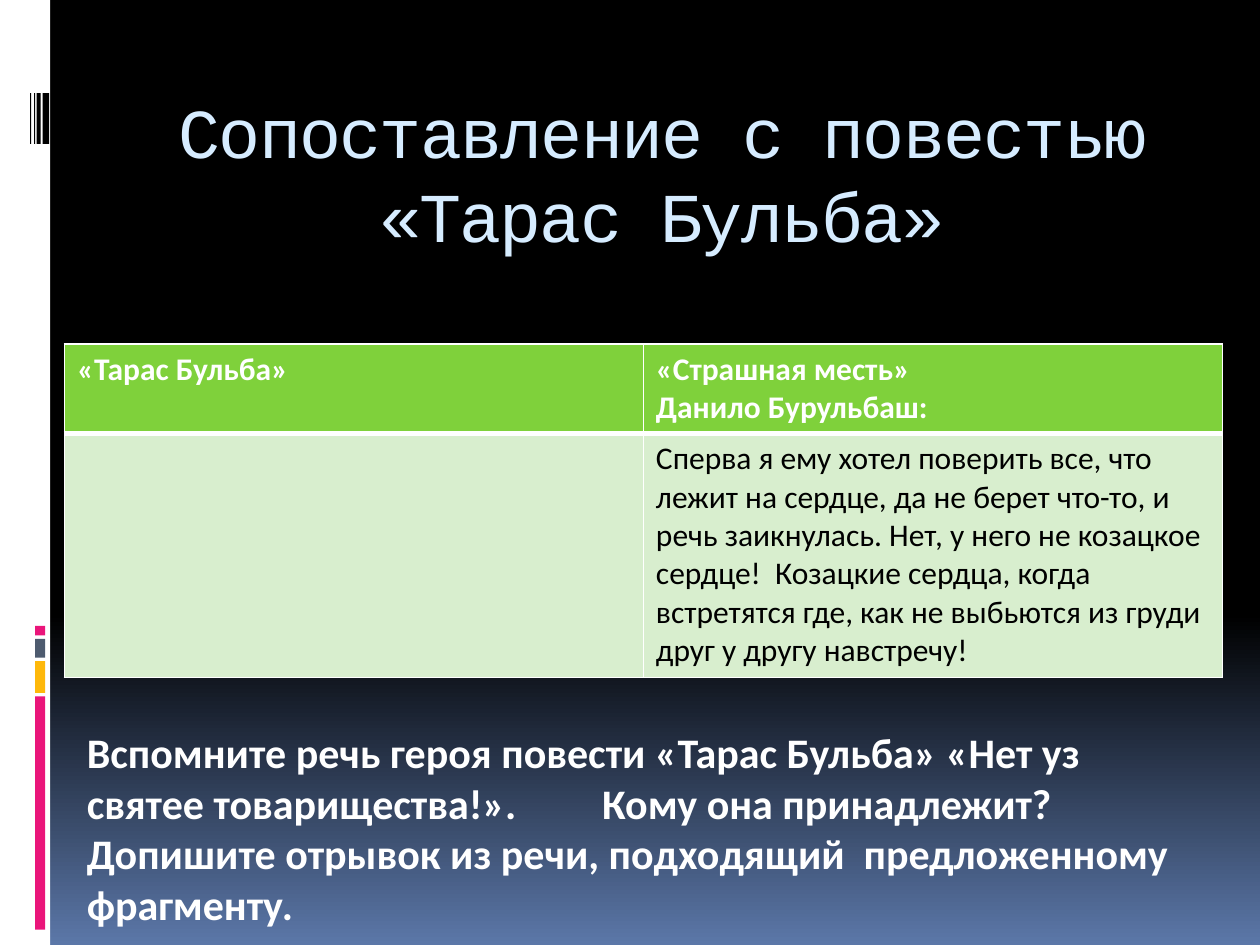
import pptx
import pptx.dml.color
import pptx.enum.shapes
import pptx.enum.text
import pptx.oxml
import pptx.oxml.ns
import pptx.util
from pptx.util import Cm

RGB = pptx.dml.color.RGBColor
WHITE = RGB(0xFF, 0xFF, 0xFF)
BLACK = RGB(0, 0, 0)
BLUE = RGB(0x5B, 0x77, 0xA8)
SKY = RGB(0xD6, 0xEC, 0xFF)
PINK = RGB(0xEA, 0x15, 0x7A)
GOLD = RGB(0xFE, 0xB8, 0x0A)
SLATE = RGB(0x4E, 0x5B, 0x6F)
GREEN = RGB(0x7F, 0xD1, 0x3B)
PALE = RGB(0xD8, 0xEE, 0xCE)

TITLE = {"name": "Courier New", "size": pptx.util.Pt(40), "bold": False, "color": SKY}
HEAD = {"name": "Calibri", "size": pptx.util.Pt(18), "bold": True, "color": WHITE}
BODY = {**HEAD, "bold": False, "color": BLACK}
TASK = {**HEAD, "size": pptx.util.Pt(24)}

ROWS = [
    (["«Тарас Бульба»", "«Страшная месть»\nДанило Бурульбаш:"], HEAD, GREEN, 3),
    (["", "Сперва я ему хотел поверить все, что лежит на сердце, да не берет "
      "что-то, и речь заикнулась. Нет, у него не козацкое сердце!  Козацкие "
      "сердца, когда встретятся где, как не выбьются из груди друг у другу "
      "навстречу!"], BODY, PALE, 1),
]


class Deck:
    def __init__(self, show):
        self.slide = show.slides.add_slide(show.slide_layouts[5])
        self.shapes = self.slide.shapes
        self.names = pptx.oxml.ns.nsdecls("a")

    def style(self, para, look):
        for key, value in look.items():
            if key == "color":
                para.font.color.rgb = value
            else:
                setattr(para.font, key, value)

    def label(self, frame, text, look):
        frame.text = text
        for para in frame.paragraphs:
            self.style(para, look)

    def ground(self, stops):
        fill = self.slide.background.fill
        fill.gradient()
        fill.gradient_angle = 270
        for stop, (place, color) in zip(fill.gradient_stops, stops):
            stop.position = place
            stop.color.rgb = color

    def bar(self, left, top, width, height, color):
        kind = pptx.enum.shapes.MSO_SHAPE.RECTANGLE
        bar = self.shapes.add_shape(kind, Cm(left), Cm(top), Cm(width), Cm(height))
        bar.shadow.inherit = False
        bar.fill.solid()
        bar.fill.fore_color.rgb = color
        bar.line.fill.background()

    def title(self, text, area, look):
        head = self.shapes.title
        head.left, head.top, head.width, head.height = map(Cm, area)
        frame = head.text_frame
        frame.word_wrap = True
        frame.auto_size = pptx.enum.text.MSO_AUTO_SIZE.NONE
        frame.vertical_anchor = pptx.enum.text.MSO_ANCHOR.TOP
        self.label(frame, text, look)
        para = frame.paragraphs[0]
        para.alignment = pptx.enum.text.PP_ALIGN.CENTER
        para.runs[0]._r.get_or_add_rPr().set("spc", "-100")

    def text(self, text, area, look, stop):
        box = self.shapes.add_textbox(*map(Cm, area))
        frame = box.text_frame
        frame.word_wrap = True
        frame.text = text
        para = frame.paragraphs[0]
        para._p.get_or_add_pPr().append(pptx.oxml.parse_xml(
            f'<a:tabLst {self.names}><a:tab pos="{int(Cm(stop))}" algn="l"/></a:tabLst>'))
        self.style(para, look)

    def edge(self, side, width):
        return pptx.oxml.parse_xml(
            f'<a:{side} {self.names} w="{int(pptx.util.Pt(width))}"><a:solidFill>'
            f'<a:srgbClr val="{WHITE}"/></a:solidFill></a:{side}>')

    def table(self, rows, area, highs):
        grid = self.shapes.add_table(len(rows), 2, *map(Cm, area)).table
        upper = 1
        for r, (texts, look, color, lower) in enumerate(rows):
            grid.rows[r].height = Cm(highs[r])
            for c, text in enumerate(texts):
                cell = grid.cell(r, c)
                self.label(cell.text_frame, text, look)
                cell.fill.solid()
                cell.fill.fore_color.rgb = color
                sides = {"lnL": 1, "lnR": 1, "lnT": upper, "lnB": lower}
                for spot, (side, width) in enumerate(sides.items()):
                    cell._tc.get_or_add_tcPr().insert(spot, self.edge(side, width))
            upper = lower


def main():
    show = pptx.Presentation()
    show.slide_width, show.slide_height = Cm(25.4), Cm(19.05)
    deck = Deck(show)
    deck.ground([(0.65, BLACK), (1, BLUE)])
    deck.bar(0, 0, 1.01, 19.05, WHITE)
    top = 12.62
    for height, color in [(0.19, PINK), (0.38, SLATE), (0.64, GOLD), (4.7, PINK)]:
        deck.bar(0.71, top, 0.2, height, color)
        top += height + 0.07
    for left, width in [(0.61, 0.02), (0.69, 0.02), (0.74, 0.08), (0.86, 0.13)]:
        deck.bar(left, 1.88, width, 1.02, BLACK)
    deck.title("Сопоставление с повестью «Тарас Бульба»", (2.54, 1.65, 21.59, 2.54), TITLE)
    deck.table(ROWS, (1.3, 6.93, 23.34, 6.7), (1.78, 4.92))
    deck.text("Вспомните речь героя повести «Тарас Бульба» «Нет уз святее "
              "товарищества!».\tКому она принадлежит?  Допишите отрывок из речи, "
              "подходящий  предложенному фрагменту.",
              (1.5, 14.53, 23.01, 4.37), TASK, 10.39)
    show.save("out.pptx")


if __name__ == "__main__":
    main()
